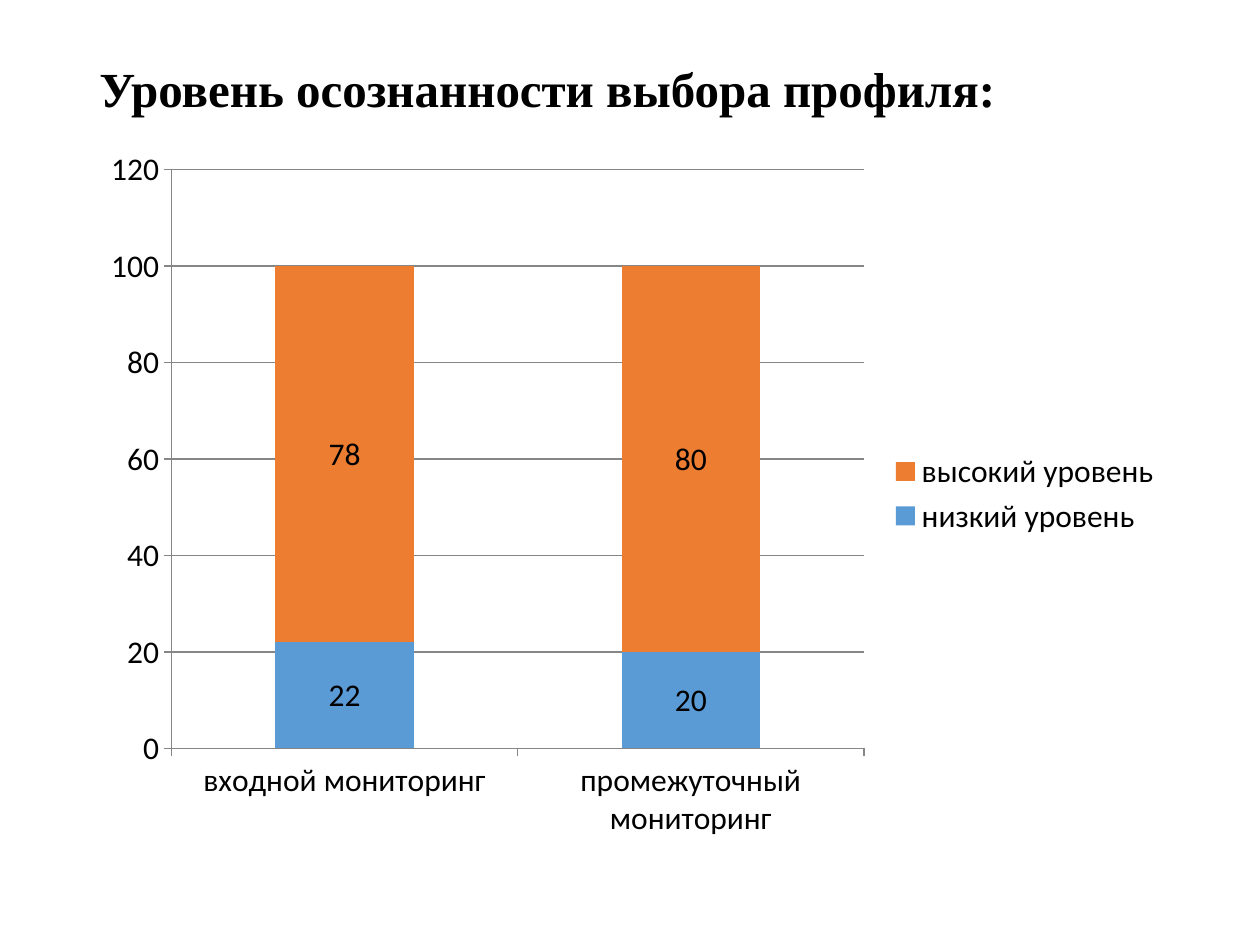
from pptx import Presentation
from pptx import util as u
from pptx.chart.data import CategoryChartData
from pptx.dml.color import RGBColor
from pptx.enum import chart as ch, text

WIDE, HIGH = u.Inches(10), u.Inches(7.5)


def paint(color, code):
    color.rgb = RGBColor.from_string(code)


def area(left, top, width, height):
    """Turn shares of the slide's size into lengths."""
    return [int(s * side) for s, side in
            zip((left, top, width, height), (WIDE, HIGH) * 2)]


deck = Presentation()
deck.slide_width, deck.slide_height = WIDE, HIGH
slide = deck.slides.add_slide(deck.slide_layouts[6])

# Title
frame = slide.shapes.add_textbox(*area(0.069, 0.024, 0.862, 0.145)).text_frame
frame.word_wrap = True
frame.vertical_anchor = text.MSO_ANCHOR.MIDDLE
head = frame.paragraphs[0]
head.text = "Уровень осознанности выбора профиля:"
head.line_spacing = 0.9
head.font.name, head.font.size, head.font.bold = "Times New Roman", u.Pt(28), True
paint(head.font.color, "000000")

# Chart data
levels = [("низкий уровень", (22, 20), "5B9BD5"),
          ("высокий уровень", (78, 80), "ED7D31")]
data = CategoryChartData()
data.categories = ["входной мониторинг", "промежуточный мониторинг"]
for name, vals, _ in levels:
    data.add_series(name, vals)

# Stacked columns
chart = slide.shapes.add_chart(ch.XL_CHART_TYPE.COLUMN_STACKED,
                               *area(0.071, 0.144, 0.861, 0.757), data).chart
chart.has_title = False
chart.font.name, chart.font.size = "Calibri", u.Pt(18)
paint(chart.font.color, "000000")
plot = chart.plots[0]
plot.gap_width, plot.overlap = 150, 100
plot.vary_by_categories = False
for bar, (_, _, code) in zip(plot.series, levels):
    bar.format.fill.solid()
    paint(bar.format.fill.fore_color, code)
    bar.data_labels.show_value = True

# Axes and grid
rows = chart.value_axis
rows.minimum_scale, rows.maximum_scale, rows.major_unit = 0, 120, 20
rows.has_major_gridlines = True
for part in (rows, chart.category_axis, rows.major_gridlines):
    paint(part.format.line.color, "868686")
    part.format.line.width = u.Pt(0.75)
for axis in (rows, chart.category_axis):
    axis.major_tick_mark = ch.XL_TICK_MARK.OUTSIDE

# Legend
chart.has_legend = True
chart.legend.position = ch.XL_LEGEND_POSITION.RIGHT
chart.legend.include_in_layout = False

deck.save("out.pptx")
